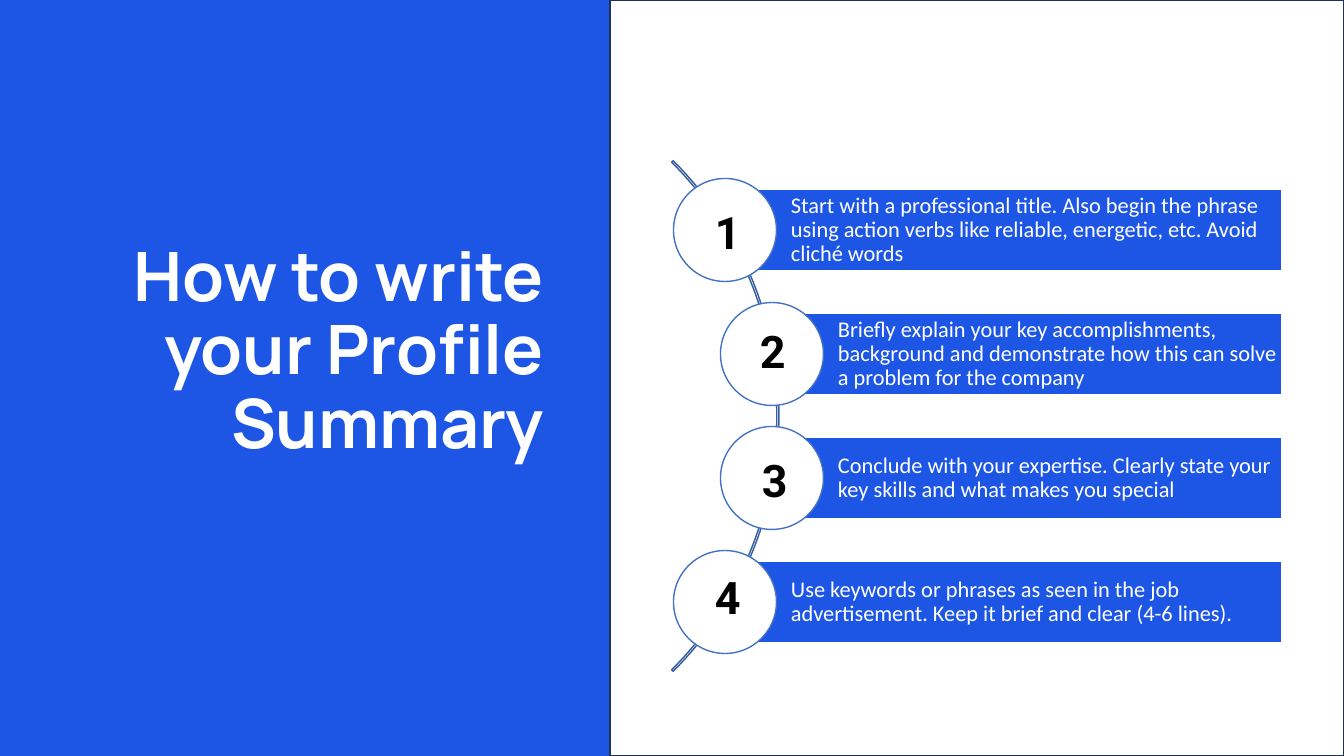
from pptx import Presentation
from pptx.dml.color import RGBColor
from pptx.enum.shapes import MSO_SHAPE as Preset
from pptx.enum.text import MSO_ANCHOR as Anchor, PP_ALIGN as Align
from pptx.util import Pt

TITLE = "How to write your Profile Summary"
STEPS = [
    ("Start with a professional title. Also begin the phrase using action verbs "
     "like reliable, energetic, etc. Avoid cliché words", 725, (705, 200)),
    ("Briefly explain your key accomplishments, background and demonstrate how "
     "this can solve a problem for the company", 772, (750, 319)),
    ("Conclude with your expertise. Clearly state your key skills and what makes "
     "you special", 772, (752, 448)),
    ("Use keywords or phrases as seen in the job advertisement. Keep it brief and "
     "clear (4-6 lines).", 725, (705, 565)),
]
BLUE, WHITE, BLACK = "1D55E5", "FFFFFF", "000000"
PANEL_LINE, ARC_LINE, CIRCLE_LINE = "1E3256", "365B9D", "4472C4"
BAR_TOP, BAR_STEP, BAR_HEIGHT, BAR_RIGHT = 189, 124, 82, 1282
CIRCLE = 103


def px(length):
    return round(length * 914400 / 100.8)


def color(value):
    return RGBColor.from_string(value)


def add_shape(preset, box, fill, line):
    shape = slide.shapes.add_shape(preset, *map(px, box))
    shape.shadow.inherit = False
    if fill:
        shape.fill.solid()
        shape.fill.fore_color.rgb = color(fill)
    else:
        shape.fill.background()
    shape.line.color.rgb = color(line)
    shape.line.width = Pt(1)
    return shape


def write(shape, text, font_name, size, ink, bold=False, align=Align.LEFT,
          anchor=Anchor.TOP, spacing=None, margins=(10, 5, 10, 5)):
    frame = shape.text_frame
    frame.word_wrap = True
    frame.vertical_anchor = anchor
    (frame.margin_left, frame.margin_top,
     frame.margin_right, frame.margin_bottom) = map(px, margins)
    paragraph = frame.paragraphs[0]
    paragraph.alignment = align
    paragraph.line_spacing = spacing
    run = paragraph.add_run()
    run.text = text
    run.font.name = font_name
    run.font.size = Pt(size)
    run.font.bold = bold
    run.font.color.rgb = color(ink)


presentation = Presentation()
presentation.slide_width, presentation.slide_height = px(1344), px(756)
slide = presentation.slides.add_slide(presentation.slide_layouts[6])
slide.background.fill.solid()
slide.background.fill.fore_color.rgb = color(BLUE)

add_shape(Preset.RECTANGLE, (610, 0, 734, 756), WHITE, PANEL_LINE)
title = slide.shapes.add_textbox(px(62), px(220), px(492), px(248))
write(title, TITLE, "Manrope", 48.6, WHITE, bold=True, align=Align.RIGHT,
      anchor=Anchor.BOTTOM, spacing=0.9)

arc = add_shape(Preset.BLOCK_ARC, (57, 55, 722, 722), None, ARC_LINE)
for index, value in enumerate((189, 27, 0.003)):
    arc.adjustments[index] = value

for index, (text, left, _) in enumerate(STEPS):
    top = BAR_TOP + index * BAR_STEP
    bar = add_shape(Preset.RECTANGLE, (left, top, BAR_RIGHT - left, BAR_HEIGHT), BLUE, WHITE)
    write(bar, text, "Calibri", 16, WHITE, anchor=Anchor.MIDDLE, spacing=0.9,
          margins=(66, 4, 4, 4))
    circle_top = top + (BAR_HEIGHT - CIRCLE) / 2
    add_shape(Preset.OVAL, (left - CIRCLE / 2, circle_top, CIRCLE, CIRCLE), WHITE, CIRCLE_LINE)

for number, (_, _, (left, top)) in enumerate(STEPS, 1):
    label = slide.shapes.add_textbox(px(left), px(top), px(42), px(65))
    write(label, str(number), "Roboto", 32, BLACK, bold=True)

presentation.save("out.pptx")
